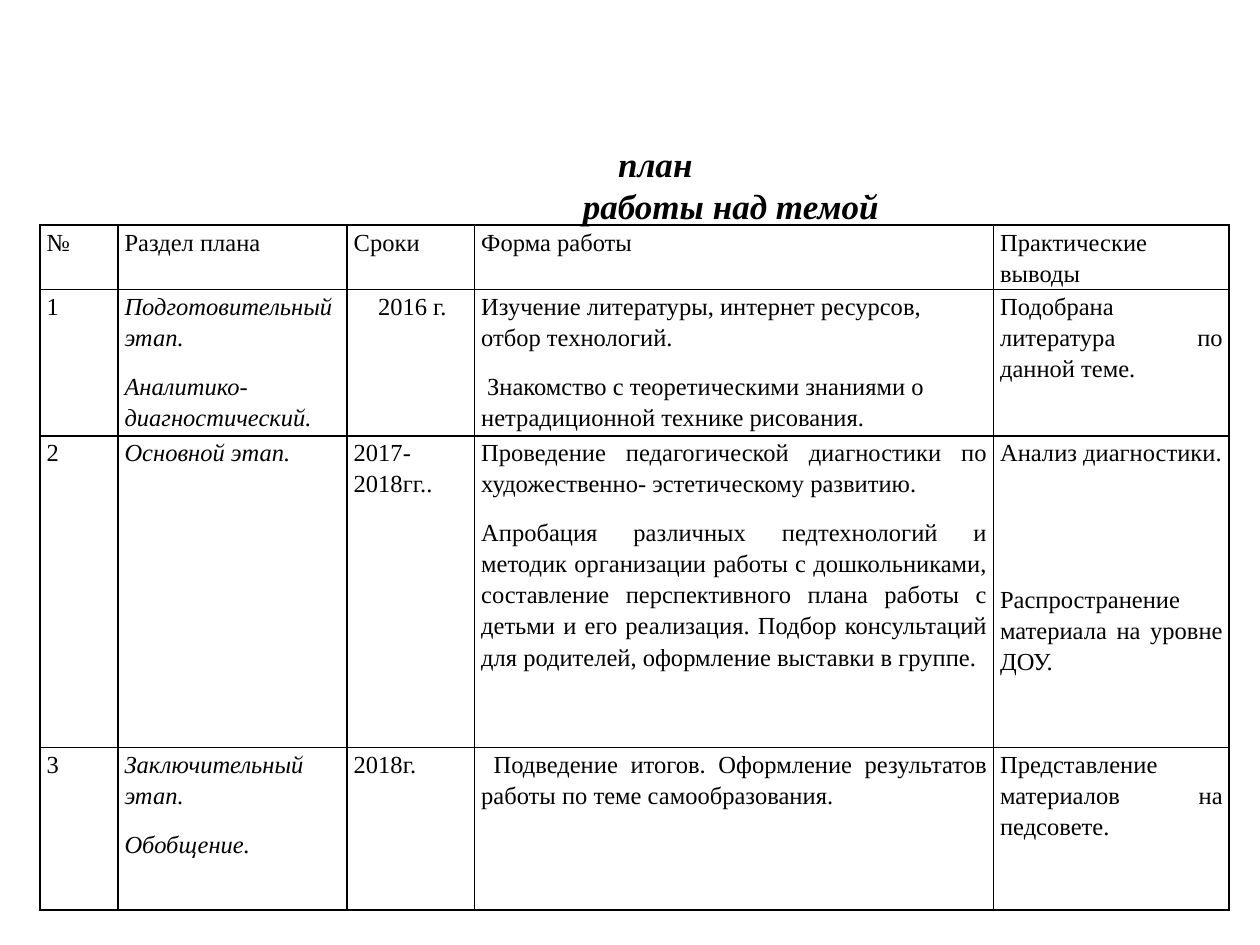
"""Builds a slide with the work plan table for a self-education topic."""
from dataclasses import dataclass

from lxml.etree import SubElement
from pptx import Presentation
from pptx.dml.color import RGBColor
from pptx.enum.text import MSO_ANCHOR, MSO_AUTO_SIZE, PP_ALIGN as Align
from pptx.oxml.ns import qn
from pptx.util import Cm, Pt

BLACK = RGBColor(0x00, 0x00, 0x00)
FONT = "Times New Roman"
COLUMN_WIDTHS = (1.57, 4.62, 2.57, 10.46, 4.75)
ROW_HEIGHTS = (1.3, 2.95, 6.28, 3.27)


@dataclass
class Line:
    text: str
    italic: bool = False
    align: Align = Align.JUSTIFY
    indent: float = 0
    before: float = 0
    after: float = 10


PLAN = (
    (
        [Line("№")],
        [Line("Раздел плана")],
        [Line("Сроки")],
        [Line("Форма работы")],
        [Line("Практические выводы")],
    ),
    (
        [Line("1")],
        [Line("Подготовительный этап.", italic=True),
         Line("Аналитико-диагностический.", italic=True)],
        [Line("2016 г.", indent=0.49)],
        [Line("Изучение литературы, интернет ресурсов,\nотбор технологий.", align=Align.LEFT),
         Line("Знакомство с теоретическими знаниями о нетрадиционной технике рисования.",
              align=Align.LEFT, indent=0.12)],
        [Line("Подобрана литература по данной теме.")],
    ),
    (
        [Line("2")],
        [Line("Основной этап.", italic=True)],
        [Line("2017-2018гг..", after=0)],
        [Line("Проведение педагогической диагностики по художественно- эстетическому развитию."),
         Line("Апробация различных педтехнологий и методик организации работы с дошкольниками, "
              "составление перспективного плана работы с детьми и его реализация. "
              "Подбор консультаций для родителей, оформление выставки в группе.")],
        [Line("Анализ диагностики."),
         Line("Распространение материала на уровне ДОУ.", before=56)],
    ),
    (
        [Line("3")],
        [Line("Заключительный этап.", italic=True), Line("Обобщение.", italic=True)],
        [Line("2018г.")],
        [Line("Подведение итогов. Оформление результатов работы по теме самообразования.",
              indent=0.25)],
        [Line("Представление материалов на педсовете.", after=0)],
    ),
)


@dataclass
class PlanSlide:
    slide: object
    font: str = FONT
    color: RGBColor = BLACK
    border: float = 1

    def text(self, frame, lines, size, bold=False, spacing=1.0):
        for index, line in enumerate(lines):
            paragraph = frame.add_paragraph() if index else frame.paragraphs[0]
            paragraph.alignment = line.align
            paragraph.line_spacing = spacing
            paragraph.space_before = Pt(line.before)
            paragraph.space_after = Pt(line.after)
            properties = paragraph._p.get_or_add_pPr()
            properties.set("marL", "0")
            properties.set("indent", str(Cm(line.indent)))
            for number, part in enumerate(line.text.split("\n")):
                if number:
                    paragraph.add_line_break()
                run = paragraph.add_run()
                run.text = part
                run.font.name = self.font
                run.font.size = Pt(size)
                run.font.bold = bold
                run.font.italic = line.italic
                run.font.color.rgb = self.color

    def title(self, left, top, width, height, lines):
        frame = self.slide.shapes.add_textbox(Cm(left), Cm(top), Cm(width), Cm(height)).text_frame
        frame.word_wrap = True
        frame.auto_size = MSO_AUTO_SIZE.SHAPE_TO_FIT_TEXT
        self.text(frame, lines, 20, bold=True)

    def outline(self, cell):
        properties = cell._tc.get_or_add_tcPr()
        for side in ("lnL", "lnR", "lnT", "lnB"):
            edge = SubElement(properties, qn(f"a:{side}"), w=str(Pt(self.border)))
            fill = SubElement(edge, qn("a:solidFill"))
            SubElement(fill, qn("a:srgbClr"), val=str(self.color))

    def table(self, left, top, widths, heights, rows):
        table = self.slide.shapes.add_table(
            len(heights), len(widths), Cm(left), Cm(top), Cm(sum(widths)), Cm(sum(heights))
        ).table
        table.first_row = table.horz_banding = False
        for column, width in zip(table.columns, widths):
            column.width = Cm(width)
        for row, height, entries in zip(table.rows, heights, rows):
            row.height = Cm(height)
            for cell, lines in zip(row.cells, entries):
                cell.margin_left = cell.margin_right = Cm(0.13)
                cell.margin_top = cell.margin_bottom = 0
                cell.vertical_anchor = MSO_ANCHOR.TOP
                self.outline(cell)
                cell.fill.background()
                self.text(cell.text_frame, lines, 14, spacing=1.15)


def main():
    presentation = Presentation()
    presentation.slide_width, presentation.slide_height = Cm(25.4), Cm(19.05)
    plan = PlanSlide(presentation.slides.add_slide(presentation.slide_layouts[6]))
    plan.table(0.81, 4.54, COLUMN_WIDTHS, ROW_HEIGHTS, PLAN)
    plan.title(11.5, 2.75, 8.56, 1.96, [
        Line("план", italic=True, align=Align.LEFT, indent=0.71, after=0),
        Line("работы над темой", italic=True, align=Align.LEFT, after=0),
    ])
    presentation.save("out.pptx")


if __name__ == "__main__":
    main()
